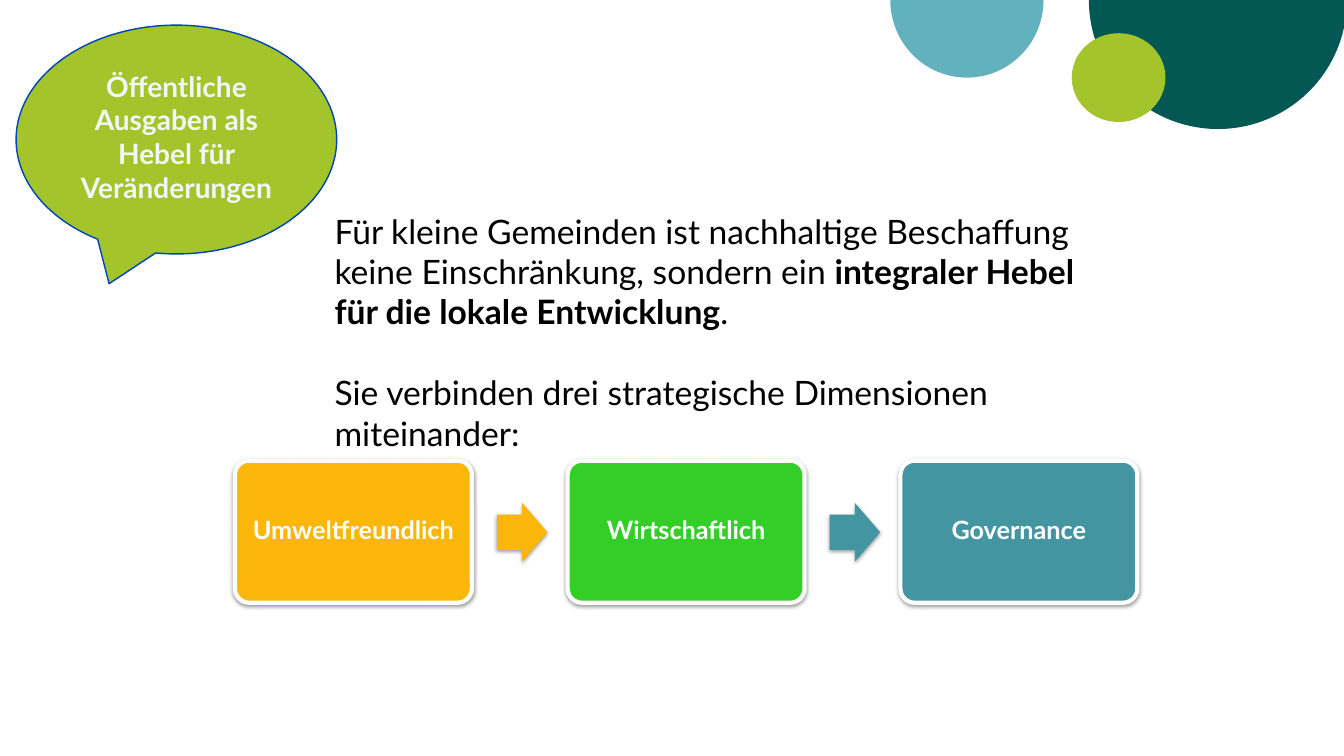
"""Build the slide on public spending as a lever for change."""
from dataclasses import dataclass
from typing import NamedTuple, Optional

from lxml import etree
from pptx import Presentation
from pptx.dml.color import RGBColor
from pptx.enum.shapes import MSO_SHAPE
from pptx.enum.text import MSO_ANCHOR, PP_ALIGN
from pptx.oxml.ns import qn
from pptx.util import Emu, Pt

PIE = MSO_SHAPE.PIE
OVAL = MSO_SHAPE.OVAL
CALLOUT = MSO_SHAPE.OVAL_CALLOUT
CARD = MSO_SHAPE.ROUNDED_RECTANGLE
ARROW = MSO_SHAPE.RIGHT_ARROW
CENTER = PP_ALIGN.CENTER
MIDDLE = MSO_ANCHOR.MIDDLE

EMU_PER_PX = 9144
CARD_LEFT, CARD_TOP, CARD_WIDTH, CARD_HEIGHT = 233, 457, 235, 141
CARD_PITCH = 330
ARROW_OFFSET, ARROW_TOP, ARROW_WIDTH, ARROW_HEIGHT = 260, 499, 50, 58


@dataclass(frozen=True)
class Theme:
    font: str = "Lato"
    dark_teal: str = "035854"
    light_teal: str = "64B1BE"
    lime: str = "A3C42A"
    outline: str = "0043B5"
    pale: str = "F0F8FC"
    black: str = "000000"
    white: str = "FFFFFF"
    amber: str = "FAB609"
    green: str = "33CE27"
    teal: str = "4495A2"
    body_size: int = 24
    callout_size: int = 20
    card_size: int = 18
    paragraph_gap: int = 29


class Box(NamedTuple):
    left: int
    top: int
    width: int
    height: int


class Figure(NamedTuple):
    kind: MSO_SHAPE
    box: Box
    fill: str
    adjustments: tuple[float, ...] = ()
    line: Optional[str] = None
    line_width: float = 0
    shadow: bool = False


class Dimension(NamedTuple):
    label: str
    fill: str
    arrow_fill: Optional[str] = None


THEME = Theme()

DECORATIONS = (
    Figure(PIE, Box(1080, -128, 256, 256), THEME.dark_teal, (0, 108)),
    Figure(PIE, Box(883, -77, 152, 154), THEME.light_teal, (0, 108)),
    Figure(OVAL, Box(1063, 33, 93, 88), THEME.lime),
)

SPEECH_BUBBLE = Figure(CALLOUT, Box(16, 25, 318, 227), THEME.lime, (-0.21, 0.63), THEME.outline, 1)

DIMENSIONS = (
    Dimension("Umweltfreundlich", THEME.amber, THEME.amber),
    Dimension("Wirtschaftlich", THEME.green, THEME.teal),
    Dimension("Governance", THEME.teal),
)

BODY = (
    (
        ("Für kleine Gemeinden ist nachhaltige Beschaffung keine Einschränkung, sondern ein ", False),
        ("integraler Hebel für die lokale Entwicklung", True),
        (".", False),
    ),
    (("Sie verbinden drei strategische Dimensionen miteinander:", False),),
)


def px(length: int) -> Emu:
    """Turn px into EMU."""
    return Emu(length * EMU_PER_PX)


def style_font(font, size: int, color: str) -> None:
    """Apply the theme typeface with a size and colour."""
    font.name = THEME.font
    font.size = Pt(size)
    font.color.rgb = RGBColor.from_string(color)


def add_shadow(shape) -> None:
    """Give a shape a soft shadow below it."""
    effects = shape._element.spPr.find(qn("a:effectLst"))
    shadow = etree.SubElement(
        effects, qn("a:outerShdw"),
        blurRad=str(px(4)), dist=str(px(2)), dir="5400000", rotWithShape="0",
    )
    color = etree.SubElement(shadow, qn("a:srgbClr"), val=THEME.black)
    etree.SubElement(color, qn("a:alpha"), val="38000")


def add_figure(slide, figure: Figure):
    """Draw a preset shape and return it."""
    shape = slide.shapes.add_shape(figure.kind, *map(px, figure.box))
    for index, value in enumerate(figure.adjustments):
        shape.adjustments[index] = value
    shape.fill.solid()
    shape.fill.fore_color.rgb = RGBColor.from_string(figure.fill)
    if figure.line:
        shape.line.color.rgb = RGBColor.from_string(figure.line)
        shape.line.width = Pt(figure.line_width)
    else:
        shape.line.fill.background()
    shape.shadow.inherit = False
    if figure.shadow:
        add_shadow(shape)
    return shape


def add_label(shape, text: str, size: int, color: str):
    """Write centred bold text in a shape and return its frame."""
    frame = shape.text_frame
    frame.word_wrap = True
    frame.vertical_anchor = MIDDLE
    paragraph = frame.paragraphs[0]
    paragraph.text = text
    paragraph.alignment = CENTER
    style_font(paragraph.font, size, color)
    paragraph.font.bold = True
    return frame


def add_speech_bubble(slide) -> None:
    """Draw the title bubble."""
    shape = add_figure(slide, SPEECH_BUBBLE)
    frame = add_label(
        shape, "Öffentliche Ausgaben als Hebel für Veränderungen",
        THEME.callout_size, THEME.pale,
    )
    frame.margin_bottom = px(11)


def add_body(slide, box: Box) -> None:
    """Write the introductory paragraphs."""
    frame = slide.shapes.add_textbox(*map(px, box)).text_frame
    frame.word_wrap = True
    for index, pieces in enumerate(BODY):
        paragraph = frame.add_paragraph() if index else frame.paragraphs[0]
        if index:
            paragraph.space_before = Pt(THEME.paragraph_gap)
        style_font(paragraph.font, THEME.body_size, THEME.black)
        for text, bold in pieces:
            run = paragraph.add_run()
            run.text = text
            run.font.bold = bold


def add_dimension(slide, index: int, dimension: Dimension) -> None:
    """Draw a dimension card and the arrow that follows it."""
    left = CARD_LEFT + index * CARD_PITCH
    card_box = Box(left, CARD_TOP, CARD_WIDTH, CARD_HEIGHT)
    card = add_figure(slide, Figure(CARD, card_box, dimension.fill, (0.1,), THEME.white, 3, True))
    frame = add_label(card, dimension.label, THEME.card_size, THEME.white)
    frame.margin_left = frame.margin_right = px(7)
    frame.paragraphs[0].line_spacing = 0.9
    if dimension.arrow_fill:
        arrow_box = Box(left + ARROW_OFFSET, ARROW_TOP, ARROW_WIDTH, ARROW_HEIGHT)
        add_figure(slide, Figure(ARROW, arrow_box, dimension.arrow_fill, (0.6, 0.5), shadow=True))


def main() -> None:
    """Create and save the presentation."""
    presentation = Presentation()
    presentation.slide_width = px(1333)
    presentation.slide_height = px(750)
    slide = presentation.slides.add_slide(presentation.slide_layouts[6])
    for figure in DECORATIONS:
        add_figure(slide, figure)
    add_speech_bubble(slide)
    add_body(slide, Box(322, 204, 778, 252))
    for index, dimension in enumerate(DIMENSIONS):
        add_dimension(slide, index, dimension)
    presentation.save("out.pptx")


if __name__ == "__main__":
    main()
